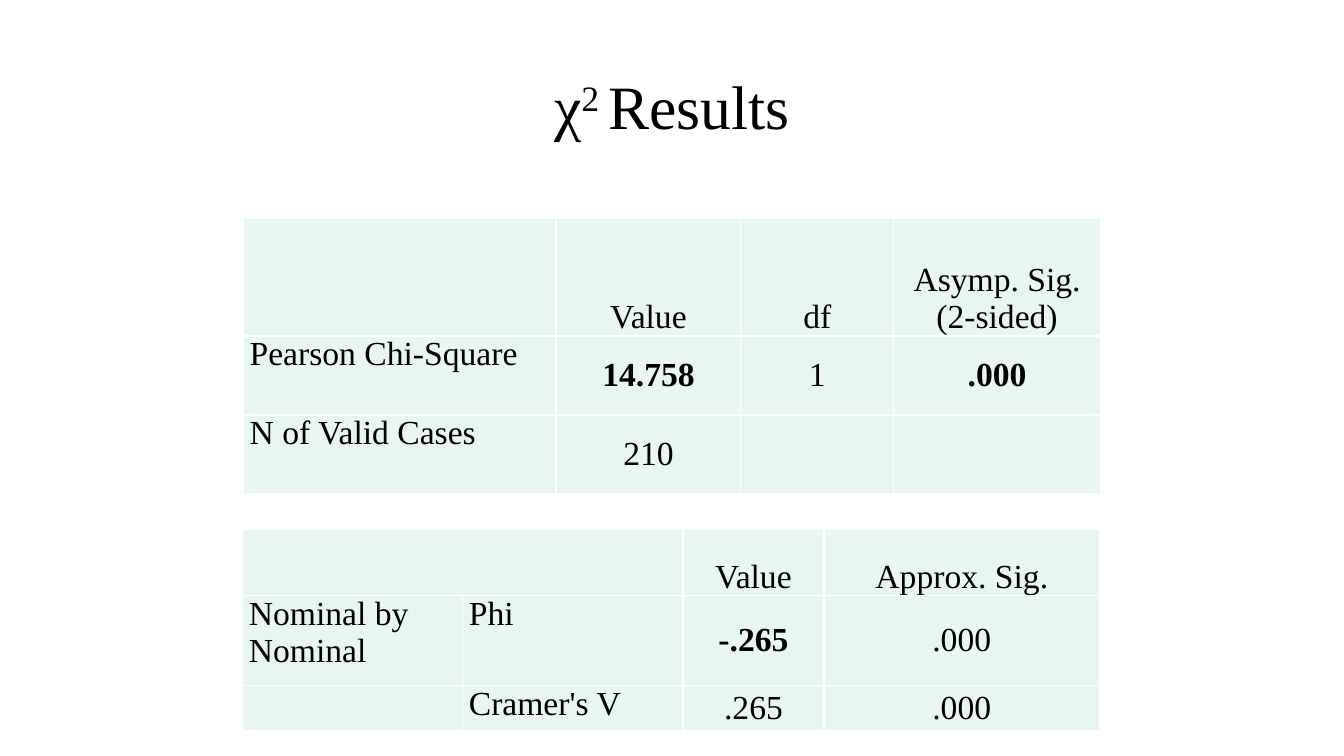
from lxml.etree import SubElement
from pptx import Presentation
from pptx.dml.color import RGBColor
from pptx.enum.text import MSO_ANCHOR, PP_ALIGN
from pptx.oxml import parse_xml
from pptx.oxml.ns import nsdecls, qn
from pptx.util import Inches, Pt

BLACK = RGBColor(0x00, 0x00, 0x00)
WHITE = RGBColor(0xFF, 0xFF, 0xFF)
MINT = RGBColor(0xE7, 0xF6, 0xEF)
FACE = "Times New Roman"
COLS, ROWS = 160, 90


class Deck:
    """Holds the text style and the current slide, laid out on a grid of 160 by 90."""

    def __init__(self):
        self.file = Presentation()
        self.file.slide_width = Inches(13.33)
        self.file.slide_height = Inches(7.5)
        self.slide = self.file.slides.add_slide(self.file.slide_layouts[5])

    def across(self, cols):
        return round(self.file.slide_width * cols / COLS)

    def down(self, rows):
        return round(self.file.slide_height * rows / ROWS)

    def box(self, left, top, width, height):
        return self.across(left), self.down(top), self.across(width), self.down(height)

    def style(self, para, size, align, bold=False):
        para.alignment = align
        font = para.font
        font.name, font.size, font.bold = FACE, Pt(size), bold
        font.color.rgb = BLACK

    def title(self, area, parts):
        shape = self.slide.shapes.title
        shape.left, shape.top, shape.width, shape.height = self.box(*area)
        shape.text_frame.vertical_anchor = MSO_ANCHOR.MIDDLE
        para = shape.text_frame.paragraphs[0]
        self.style(para, 44, PP_ALIGN.CENTER)
        for text, rise in parts:
            run = para.add_run()
            run.text = text
            if rise:
                run.font._element.set("baseline", str(rise * 1000))

    def edge(self, cell):
        props = cell._tc.get_or_add_tcPr()
        for spot, side in enumerate(("lnL", "lnR", "lnT", "lnB")):
            line = parse_xml(f'<a:{side} {nsdecls("a")} w="{Pt(1)}"/>')
            fill = SubElement(line, qn("a:solidFill"))
            SubElement(fill, qn("a:srgbClr")).set("val", str(WHITE))
            props.insert(spot, line)

    def cell(self, cell, text, head, label, bold):
        cell.margin_left = cell.margin_right = Inches(0.06)
        cell.margin_top = cell.margin_bottom = 0
        cell.fill.solid()
        cell.fill.fore_color.rgb = MINT
        self.edge(cell)
        cell.text = text
        if head:
            cell.vertical_anchor = MSO_ANCHOR.BOTTOM
        else:
            cell.vertical_anchor = MSO_ANCHOR.TOP if label else MSO_ANCHOR.MIDDLE
        align = PP_ALIGN.LEFT if label else PP_ALIGN.CENTER
        self.style(cell.text_frame.paragraphs[0], 24, align, bold)

    def table(self, left, top, widths, heights, data, labels, strong):
        area = self.box(left, top, sum(widths), sum(heights))
        frame = self.slide.shapes.add_table(len(heights), len(widths), *area)
        table = frame.table
        table.first_row = table.horz_banding = False
        for col, width in zip(table.columns, widths):
            col.width = self.across(width)
        for row, height in zip(table.rows, heights):
            row.height = self.down(height)
        for r, line in enumerate(data):
            for c, text in enumerate(line):
                self.cell(table.cell(r, c), text, r == 0, c < labels, (r, c) in strong)
        if labels > 1:
            table.cell(0, 0).merge(table.cell(0, labels - 1))

    def save(self):
        self.file.save("out.pptx")


def main():
    deck = Deck()
    deck.title((29, 5, 102, 15), [("χ", 0), ("2 ", 30), ("Results", 0)])
    deck.table(
        29, 26, (37.2, 22, 18.2, 24.6), (14, 9.4, 9.4),
        [
            ("", "Value", "df", "Asymp. Sig. (2-sided)"),
            ("Pearson Chi-Square", "14.758", "1", ".000"),
            ("N of Valid Cases", "210", "", ""),
        ],
        labels=1, strong={(1, 1), (1, 3)},
    )
    deck.table(
        28.9, 63, (26.2, 26.2, 16.8, 32.8), (7.9, 10.7, 5.4),
        [
            ("", "", "Value", "Approx. Sig."),
            ("Nominal by Nominal", "Phi", "-.265", ".000"),
            ("", "Cramer's V", ".265", ".000"),
        ],
        labels=2, strong={(1, 2)},
    )
    deck.save()


if __name__ == "__main__":
    main()
